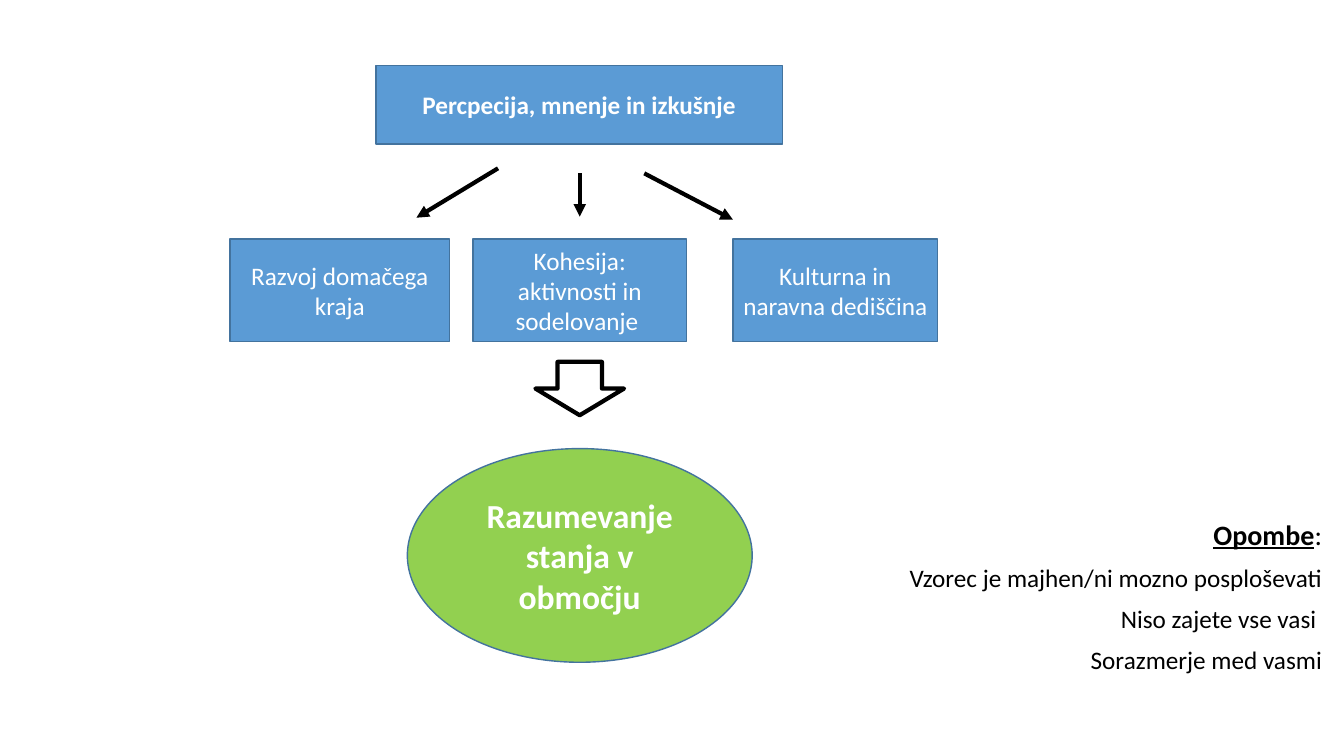
from lxml.etree import SubElement
from pptx import Presentation
from pptx.dml.color import RGBColor
from pptx.enum.shapes import MSO_CONNECTOR, MSO_SHAPE as Shape
from pptx.enum.text import MSO_ANCHOR, PP_ALIGN
from pptx.oxml.ns import qn
from pptx.util import Inches, Pt

BLUE = RGBColor(0x5B, 0x9B, 0xD5)
EDGE = RGBColor(0x43, 0x73, 0x9E)
GREEN = RGBColor(0x92, 0xD0, 0x50)
BLACK = RGBColor(0, 0, 0)
WHITE = RGBColor(255, 255, 255)
FONT = "Calibri"

TOPIC = "Percpecija, mnenje in izkušnje"
THEMES = [
    (0, 2.18, ["Razvoj domačega kraja"]),
    (2.41, 2.12, ["Kohesija:", "aktivnosti in sodelovanje "]),
    (4.99, 2.03, ["Kulturna in naravna dediščina"]),
]
ARROWS = [(2.66, 1.02, 1.85, 1.51), (3.47, 1.07, 3.47, 1.5), (4.11, 1.07, 4.99, 1.53)]
RESULT = "Razumevanje stanja v območju"
NOTES = ["Vzorec je majhen/ni mozno posploševati", "Niso zajete vse vasi ",
         "Sorazmerje med vasmi"]


def add_node(shapes, kind, box, fill, edge=EDGE, width=1, lines=(), size=18, bold=False):
    sp = shapes.add_shape(kind, *map(Inches, box))
    sp.shadow.inherit = False
    sp.fill.solid()
    sp.fill.fore_color.rgb = fill
    sp.line.color.rgb = edge
    sp.line.width = Pt(width)
    tf = sp.text_frame
    tf.word_wrap = True
    tf.vertical_anchor = MSO_ANCHOR.MIDDLE
    for i, line in enumerate(lines):
        p = tf.add_paragraph() if i else tf.paragraphs[0]
        p.text = line
        p.alignment = PP_ALIGN.CENTER
        p.font.name = FONT
        p.font.size = Pt(size)
        p.font.bold = bold
        p.font.color.rgb = WHITE


def add_arrow(shapes, x1, y1, x2, y2):
    cx = shapes.add_connector(MSO_CONNECTOR.STRAIGHT, *map(Inches, (x1, y1, x2, y2)))
    cx.line.color.rgb = BLACK
    cx.line.width = Pt(3)
    SubElement(cx.line._get_or_add_ln(), qn("a:tailEnd"), type="triangle")
    SubElement(cx._element.spPr, qn("a:effectLst"))


def add_diagram(s, x, y):
    axis = x + 3.47
    group = s.shapes.add_group_shape().shapes
    add_node(group, Shape.RECTANGLE, (axis - 2.02, y, 4.03, 0.78), BLUE,
             lines=[TOPIC], bold=True)
    for dx, w, lines in THEMES:
        add_node(group, Shape.RECTANGLE, (x + dx, y + 1.72, w, 1.02), BLUE, lines=lines)
    for x1, y1, x2, y2 in ARROWS:
        add_arrow(group, x + x1, y + y1, x + x2, y + y2)
    add_node(group, Shape.OVAL, (axis - 1.71, y + 3.8, 3.42, 2.12), GREEN,
             lines=[RESULT], size=24, bold=True)
    add_node(s.shapes, Shape.DOWN_ARROW, (axis - 0.44, y + 2.94, 0.88, 0.53),
             WHITE, BLACK, 3)


def add_notes(s, x, y, w, h):
    tf = s.shapes.add_textbox(*map(Inches, (x, y, w, h))).text_frame
    tf.word_wrap = True
    heading = tf.paragraphs[0]
    r = heading.add_run()
    r.text = "Opombe"
    r.font.bold = r.font.underline = True
    heading.add_run().text = ":"
    for note in NOTES:
        tf.add_paragraph().text = note
    for p in tf.paragraphs:
        p.alignment = PP_ALIGN.RIGHT
        p.line_spacing = 0.9
        p.space_before = Pt(10)
        p.font.name = FONT
        p.font.size = Pt(20 if p.text == heading.text else 18)
        p.font.color.rgb = BLACK


def main():
    prs = Presentation()
    prs.slide_width, prs.slide_height = Inches(13.33), Inches(7.5)
    s = prs.slides.add_slide(prs.slide_layouts[6])
    add_diagram(s, 2.28, 0.65)
    add_notes(s, 8.22, 5.12, 4.99, 2.07)
    prs.save("out.pptx")


if __name__ == "__main__":
    main()
